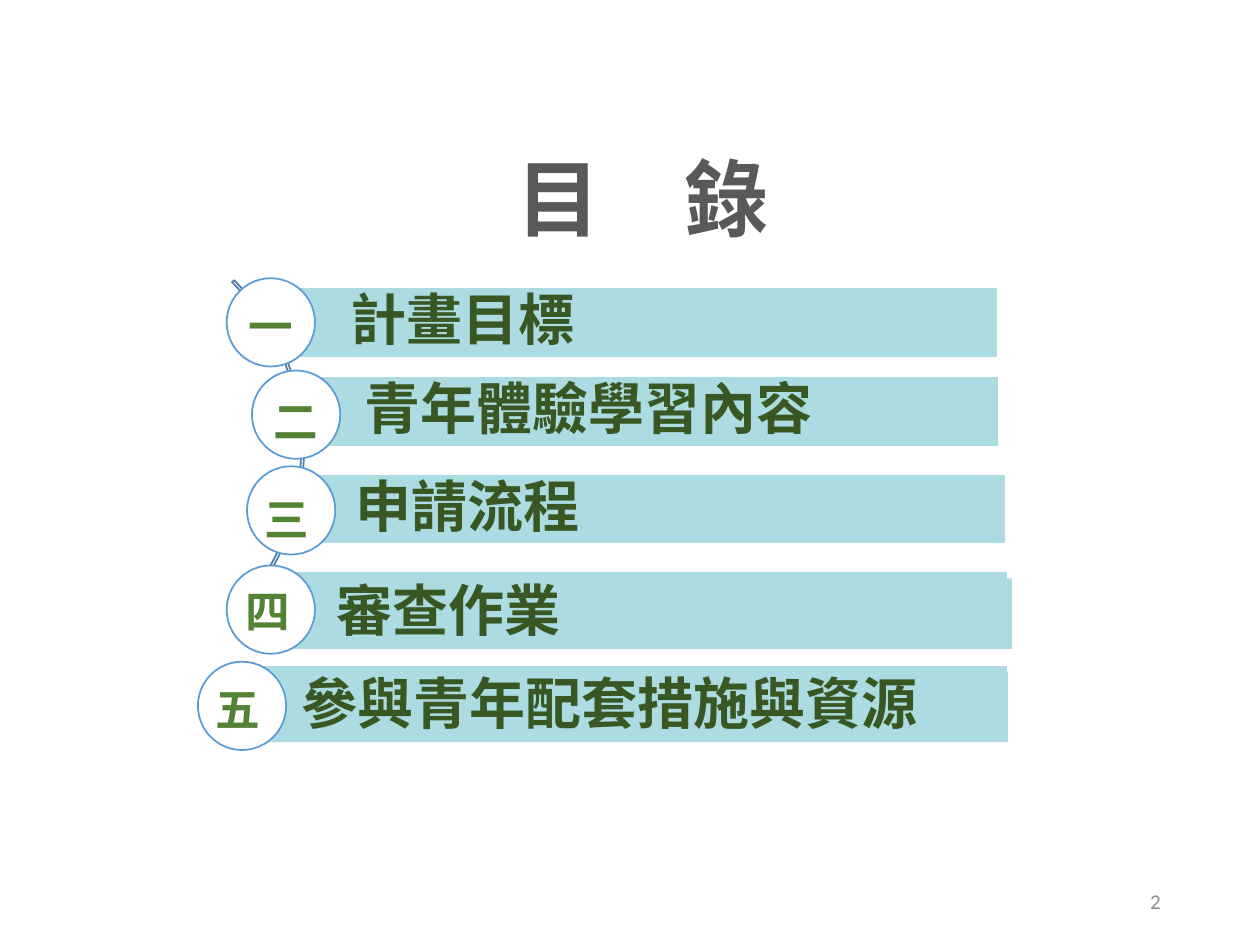
from lxml.etree import SubElement
from pptx import Presentation
from pptx.dml.color import RGBColor
from pptx.enum.shapes import MSO_SHAPE
from pptx.enum.text import MSO_ANCHOR, PP_ALIGN
from pptx.oxml.ns import qn
from pptx.util import Cm, Pt

CJK = "Noto Sans CJK SC"
BAR_HEIGHT, CIRCLE_SIZE, NUMERAL_WIDTH = 1.42, 1.78, 1.27


def write(shape, text, size, color, font=CJK, bold=True,
          align=PP_ALIGN.LEFT, spacing=0.9, left=0.13, right=0.13):
    """Fill a shape with one vertically centred paragraph."""
    frame = shape.text_frame
    frame_format = {
        "word_wrap": True, "vertical_anchor": MSO_ANCHOR.MIDDLE,
        "margin_left": Cm(left), "margin_right": Cm(right),
        "margin_top": 0, "margin_bottom": 0,
    }
    for name, value in frame_format.items():
        setattr(frame, name, value)
    paragraph = frame.paragraphs[0]
    paragraph.alignment, paragraph.line_spacing = align, spacing
    run = paragraph.add_run()
    run.text = text
    for name, value in {"size": Pt(size), "bold": bold, "name": font}.items():
        setattr(run.font, name, value)
    run.font.color.rgb = RGBColor.from_string(color)
    SubElement(run._r.get_or_add_rPr(), qn("a:ea"), typeface=font)


def draw(kind, left, top, width, height, fill=None, line=None):
    shape = slide.shapes.add_shape(kind, Cm(left), Cm(top), Cm(width), Cm(height))
    shape.shadow.inherit = False
    for part, color in ((shape.fill, fill), (shape.line.fill, line)):
        if color:
            part.solid()
            part.fore_color.rgb = RGBColor.from_string(color)
        else:
            part.background()
    if line:
        shape.line.width = Pt(1)
    return shape


deck = Presentation()
deck.slide_width, deck.slide_height = Cm(25.4), Cm(19.05)
slide = deck.slides.add_slide(deck.slide_layouts[5])

title = slide.shapes.title
title_place = {"left": 2.01, "top": 2.72, "width": 21.89, "height": 2.77}
for name, value in title_place.items():
    setattr(title, name, Cm(value))
write(title, "目　錄", 48, "595959", align=PP_ALIGN.CENTER, left=0.25, right=0.25)

arc = draw(MSO_SHAPE.BLOCK_ARC, -3.5, 4.24, 9.63, 9.63, line="497CAB")
for index, value in enumerate((189, 27, 0.006)):
    arc.adjustments[index] = value

# numeral, topic, bar (left, top, width), circle (left, top),
# numeral (left, top), offset of the topic from its bar, topic indent
chapters = [
    ("一", "計畫目標", (5.41, 5.79, 14.71), (4.57, 5.61), (4.88, 5.74), None, 1.65),
    ("二", "青年體驗學習內容", (6.2, 7.59, 13.94), (5.08, 7.47), (5.38, 7.65), None, 1.14),
    ("三", "申請流程", (6.02, 9.55, 14.25), (4.98, 9.4), (5.21, 9.63), None, 1.14),
    ("四", "審查作業", (5.56, 11.51, 14.76), (4.57, 11.4), (4.83, 11.48), (0.08, 0.15), 1.14),
    ("五", "參與青年配套措施與資源", (4.93, 13.41, 15.39), (3.99, 13.34), (4.22, 13.46), (0, 0.13), 1.14),
]
for numeral, topic, bar_place, circle_place, numeral_place, offset, indent in chapters:
    left, top, width = bar_place
    bar = draw(MSO_SHAPE.RECTANGLE, left, top, width, BAR_HEIGHT, "ACDCE2", "FFFFFF")
    if offset:
        bar = draw(MSO_SHAPE.RECTANGLE, left + offset[0], top + offset[1],
                   width, BAR_HEIGHT, "ACDCE2")
    write(bar, topic, 32, "385723", left=indent)
    draw(MSO_SHAPE.OVAL, *circle_place, CIRCLE_SIZE, CIRCLE_SIZE, "FFFFFF", "5B9BD5")
    numeral_box = slide.shapes.add_textbox(
        *map(Cm, numeral_place), Cm(NUMERAL_WIDTH), Cm(CIRCLE_SIZE))
    write(numeral_box, numeral, 25.5, "548235")

page_number = slide.shapes.add_textbox(Cm(17.93), Cm(17.65), Cm(5.72), Cm(1.02))
write(page_number, "2", 12, "8C8C8C", font="Calibri", bold=False,
      align=PP_ALIGN.RIGHT, spacing=1.0, left=0.25, right=0.25)

deck.save("out.pptx")
